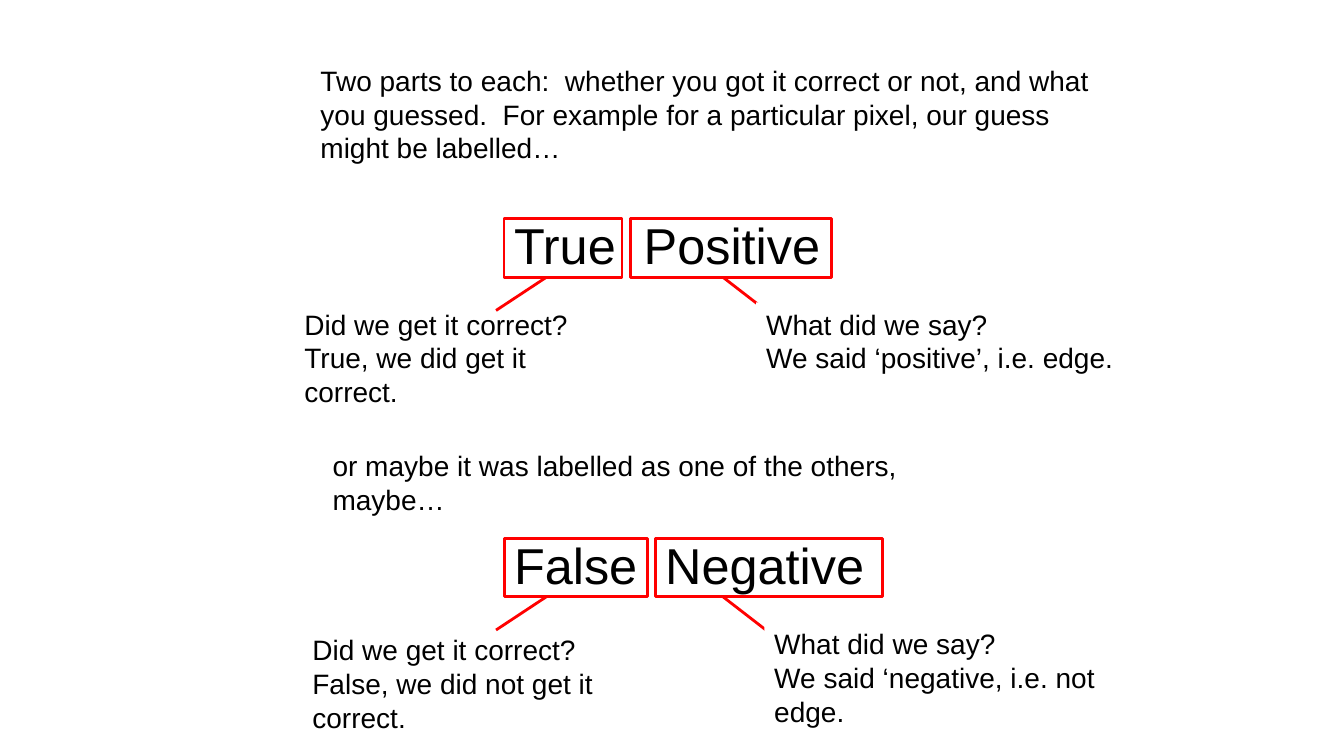
from lxml import etree
from pptx import Presentation
from pptx.dml.color import RGBColor
from pptx.enum.shapes import MSO_CONNECTOR, MSO_SHAPE
from pptx.enum.text import MSO_ANCHOR, PP_ALIGN
from pptx.oxml.ns import qn
from pptx.util import Inches, Pt

COLORS = {"text": "000000", "mark": "FF0000", "paper": "FFFFFF"}
LINE_WIDTH = Pt(2)

prs = Presentation()
prs.slide_width, prs.slide_height = Inches(13.33), Inches(7.5)
s = prs.slides.add_slide(prs.slide_layouts[6])


def rgb(name):
    return RGBColor.from_string(COLORS[name])


def add_text(text, left, top, width, height, size=20, fill=None):
    sp = s.shapes.add_textbox(Inches(left), Inches(top), Inches(width), Inches(height))
    if fill:
        sp.fill.solid()
        sp.fill.fore_color.rgb = rgb(fill)
    tf = sp.text_frame
    tf.word_wrap = True
    tf.vertical_anchor = MSO_ANCHOR.TOP
    p = tf.paragraphs[0]
    p.alignment = PP_ALIGN.LEFT
    for i, line in enumerate(text.split("\n")):
        if i:
            p.add_line_break()
        r = p.add_run()
        r.text = line
        r.font.name = "Arial"
        r.font.size = Pt(size)
        r.font.color.rgb = rgb("text")


# Introduction and transition
add_text("Two parts to each:  whether you got it correct or not, and what you guessed.  "
         "For example for a particular pixel, our guess might be labelled…",
         3.08, 0.58, 8.17, 1.1)
add_text("or maybe it was labelled as one of the others, maybe…", 3.2, 4.4, 6.5, 0.77)

# Each label: top, text, framed words (left, width), then the two explanations
labels = [
    (2.08, "True  Positive", [(5, 1.17), (6.25, 2)],
     ("Did we get it correct?\nTrue, we did get it correct.", 2.92, 3, 3.25, 1.1),
     ("What did we say?\nWe said ‘positive’, i.e. edge.", 7.5, 3, 4, 0.77)),
    (5.25, "False  Negative", [(5, 1.42), (6.5, 2.25)],
     ("Did we get it correct?\nFalse, we did not get it correct.", 3, 6.23, 3.83, 1.1),
     ("What did we say?\nWe said ‘negative, i.e. not edge.", 7.58, 6.17, 4.08, 1.1)),
]

for top, label, frames, correctness, guess in labels:
    add_text(label, 5, top, 4.75, 0.7, size=36)
    add_text(*correctness)

    # Frames around the two words
    frame_top = top + 0.09
    for left, width in frames:
        sp = s.shapes.add_shape(MSO_SHAPE.RECTANGLE, Inches(left), Inches(frame_top),
                                Inches(width), Inches(0.58))
        sp.shadow.inherit = False
        sp.fill.background()
        sp.line.color.rgb = rgb("mark")
        sp.line.width = LINE_WIDTH

    # Lines from the frames to the explanations
    line_top = frame_top + 0.58
    for x1, x2, drop in [(5.42, 4.92, 0.33), (7.17, 7.92, 0.58)]:
        line = s.shapes.add_connector(MSO_CONNECTOR.STRAIGHT, Inches(x1), Inches(line_top),
                                      Inches(x2), Inches(line_top + drop))
        line.line.color.rgb = rgb("mark")
        line.line.width = LINE_WIDTH
        etree.SubElement(line._element.spPr, qn("a:effectLst"))

    # The white box hides the end of the right line
    add_text(*guess, fill="paper")

prs.save("out.pptx")
